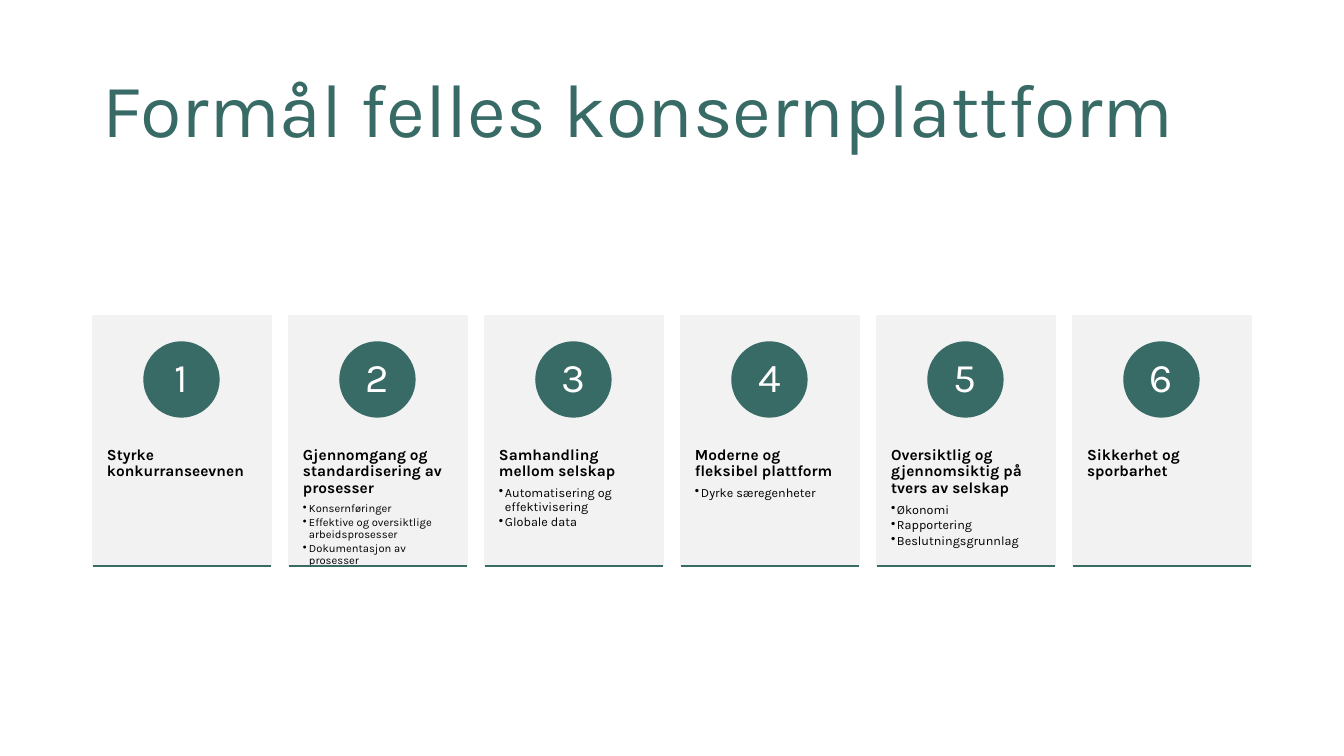
from dataclasses import dataclass

from lxml import etree
from pptx import Presentation
from pptx.dml.color import RGBColor
from pptx.enum.shapes import MSO_CONNECTOR, MSO_SHAPE
from pptx.enum.text import MSO_ANCHOR, MSO_AUTO_SIZE, PP_ALIGN
from pptx.oxml.ns import qn
from pptx.shapes.autoshape import Shape
from pptx.shapes.shapetree import GroupShapes
from pptx.text.text import TextFrame
from pptx.util import Emu, Pt

RECTANGLE, OVAL = MSO_SHAPE.RECTANGLE, MSO_SHAPE.OVAL
STRAIGHT = MSO_CONNECTOR.STRAIGHT
LEFT, CENTER = PP_ALIGN.LEFT, PP_ALIGN.CENTER
TOP, MIDDLE = MSO_ANCHOR.TOP, MSO_ANCHOR.MIDDLE
NO_AUTOFIT = MSO_AUTO_SIZE.NONE
TITLE_ONLY_LAYOUT = 5

FONT = "Karla"
GREEN, GRAY, BLACK, WHITE = "386B66", "F2F2F2", "000000", "FFFFFF"

SLIDE_WIDTH, SLIDE_HEIGHT = 1344, 756
CARD_LEFT, CARD_TOP, CARD_WIDTH, CARD_HEIGHT = 93, 316, 178, 250
CARD_STEP = 196
CIRCLE_TOP, CIRCLE_SIZE = 342, 75
TEXT_TOP, TEXT_HEIGHT = 411, 150
BULLET_INDENT = 6


@dataclass(frozen=True)
class Purpose:
    heading: str
    points: tuple[str, ...] = ()
    point_size: int = 9


PURPOSES = (
    Purpose("Styrke konkurranseevnen"),
    Purpose(
        "Gjennomgang og standardisering av prosesser",
        (
            "Konsernføringer",
            "Effektive og oversiktlige arbeidsprosesser",
            "Dokumentasjon av prosesser",
        ),
        point_size=8,
    ),
    Purpose(
        "Samhandling mellom selskap",
        ("Automatisering og effektivisering", "Globale data"),
    ),
    Purpose("Moderne og fleksibel plattform", ("Dyrke særegenheter",)),
    Purpose(
        "Oversiktlig og gjennomsiktig på tvers av selskap",
        ("Økonomi", "Rapportering", "Beslutningsgrunnlag"),
    ),
    Purpose("Sikkerhet og sporbarhet"),
)


def px(length: int) -> Emu:
    return Emu(round(length * 914400 / 100.8))


def rgb(color: str) -> RGBColor:
    return RGBColor.from_string(color)


def set_frame(frame: TextFrame, anchor: MSO_ANCHOR, side: int, edge: int) -> None:
    """Set anchor and margins; side is left and right, edge is top and bottom."""
    values = {
        "word_wrap": True,
        "auto_size": NO_AUTOFIT,
        "vertical_anchor": anchor,
        "margin_left": px(side),
        "margin_right": px(side),
        "margin_top": px(edge),
        "margin_bottom": px(edge),
    }
    for name, value in values.items():
        setattr(frame, name, value)


def write_paragraph(
    frame: TextFrame,
    text: str,
    size: int,
    color: str,
    bold: bool = False,
    alignment: PP_ALIGN = LEFT,
    space_after: float = 0,
    bullet: bool = False,
) -> None:
    """Fill the first paragraph if it is empty, otherwise add one."""
    paragraph = frame.paragraphs[0]
    if paragraph.runs:
        paragraph = frame.add_paragraph()
    if bullet:
        paragraph.level = 1
        properties = paragraph._p.get_or_add_pPr()
        properties.set("marL", str(px(BULLET_INDENT)))
        properties.set("indent", str(-px(BULLET_INDENT)))
        etree.SubElement(properties, qn("a:buChar")).set("char", "•")
    paragraph.alignment = alignment
    paragraph.line_spacing = 0.9
    paragraph.space_before = Pt(0)
    paragraph.space_after = Pt(space_after)
    run = paragraph.add_run()
    run.text = text
    for name, value in {"name": FONT, "size": Pt(size), "bold": bold}.items():
        setattr(run.font, name, value)
    run.font.color.rgb = rgb(color)


def add_filled(
    shapes: GroupShapes,
    kind: MSO_SHAPE,
    left: int,
    top: int,
    width: int,
    height: int,
    color: str,
) -> Shape:
    shape = shapes.add_shape(kind, px(left), px(top), px(width), px(height))
    shape.shadow.inherit = False
    shape.fill.solid()
    shape.fill.fore_color.rgb = rgb(color)
    shape.line.color.rgb = rgb(color)
    shape.line.width = Pt(1)
    return shape


def add_card(shapes: GroupShapes, number: int, purpose: Purpose) -> None:
    left = CARD_LEFT + (number - 1) * CARD_STEP
    add_filled(shapes, RECTANGLE, left, CARD_TOP, CARD_WIDTH, CARD_HEIGHT, GRAY)

    text_box = shapes.add_textbox(
        px(left), px(TEXT_TOP), px(CARD_WIDTH), px(TEXT_HEIGHT)
    )
    frame = text_box.text_frame
    set_frame(frame, TOP, side=14, edge=36)
    write_paragraph(frame, purpose.heading, 11, BLACK, bold=True, space_after=4.5)
    for point in purpose.points:
        size = purpose.point_size
        gap = round(size * 0.18, 1)
        write_paragraph(frame, point, size, BLACK, space_after=gap, bullet=True)

    circle_left = left + (CARD_WIDTH - CIRCLE_SIZE) // 2
    circle = add_filled(
        shapes, OVAL, circle_left, CIRCLE_TOP, CIRCLE_SIZE, CIRCLE_SIZE, GREEN
    )
    set_frame(circle.text_frame, MIDDLE, side=6, edge=1)
    write_paragraph(circle.text_frame, str(number), 29, WHITE, alignment=CENTER)

    bottom = px(CARD_TOP + CARD_HEIGHT)
    underline = shapes.add_connector(
        STRAIGHT, px(left), bottom, px(left + CARD_WIDTH), bottom
    )
    underline.line.color.rgb = rgb(GREEN)
    underline.line.width = Pt(1)
    etree.SubElement(underline._element.spPr, qn("a:effectLst"))


def main() -> None:
    presentation = Presentation()
    presentation.slide_width = px(SLIDE_WIDTH)
    presentation.slide_height = px(SLIDE_HEIGHT)
    slide = presentation.slides.add_slide(
        presentation.slide_layouts[TITLE_ONLY_LAYOUT]
    )

    title = slide.shapes.title
    placement = {"left": 93, "top": 40, "width": 1159, "height": 146}
    for name, value in placement.items():
        setattr(title, name, px(value))
    set_frame(title.text_frame, MIDDLE, side=10, edge=5)
    write_paragraph(title.text_frame, "Formål felles konsernplattform", 54, GREEN)

    cards = slide.shapes.add_group_shape().shapes
    for number, purpose in enumerate(PURPOSES, start=1):
        add_card(cards, number, purpose)

    presentation.save("out.pptx")


if __name__ == "__main__":
    main()
